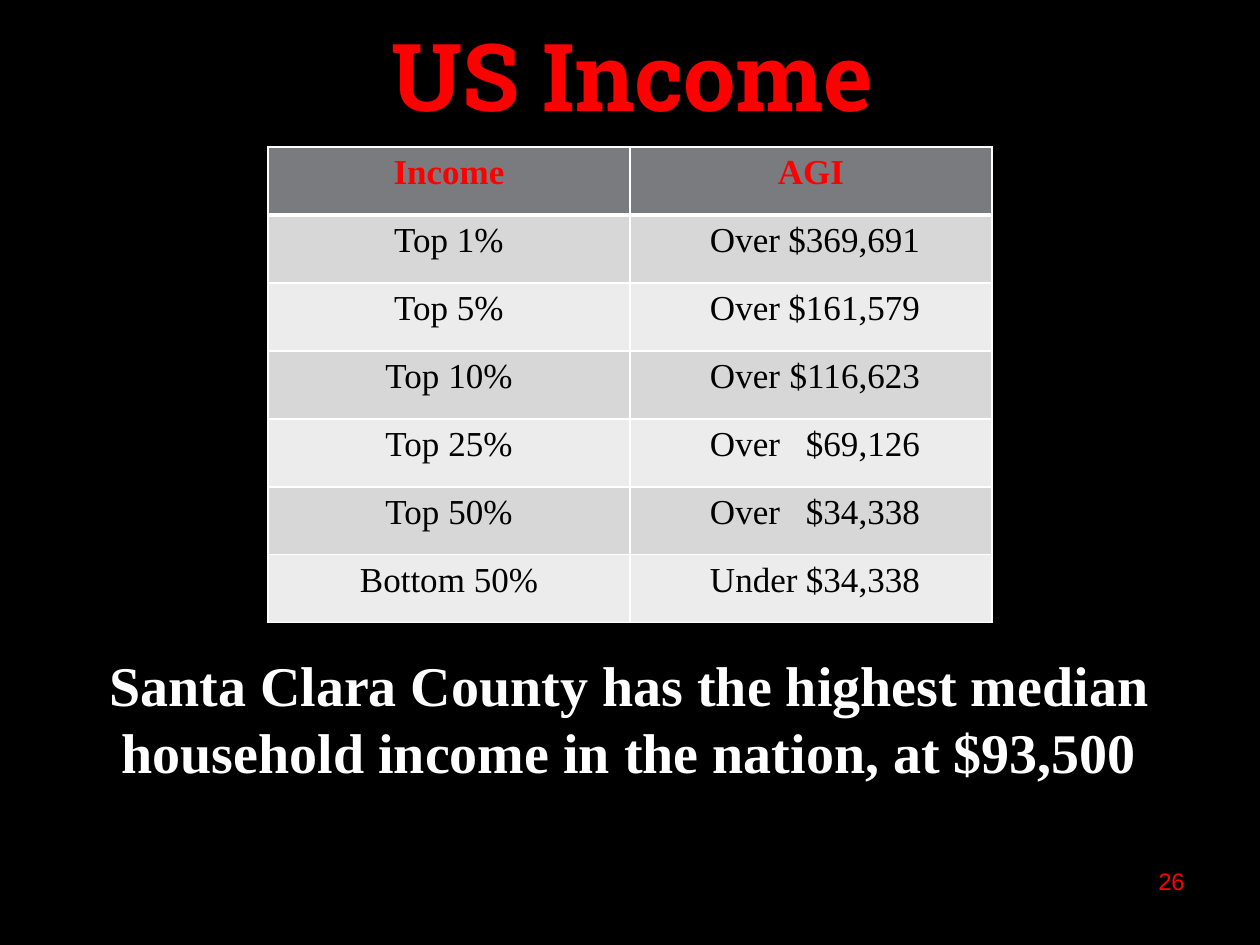
from dataclasses import dataclass

from lxml import etree
from pptx import Presentation
from pptx.dml.color import RGBColor
from pptx.enum.text import MSO_ANCHOR, PP_ALIGN
from pptx.oxml.ns import qn
from pptx.util import Pt

LEFT, CENTER, RIGHT = PP_ALIGN.LEFT, PP_ALIGN.CENTER, PP_ALIGN.RIGHT
TOP, MIDDLE = MSO_ANCHOR.TOP, MSO_ANCHOR.MIDDLE


@dataclass(frozen=True)
class Theme:
    black: str = "000000"
    white: str = "FFFFFF"
    red: str = "FF0000"
    header: str = "797B7E"
    bands: tuple = ("D7D7D8", "ECECEC")
    serif: str = "Times New Roman"
    slab: str = "Roboto Slab"
    sans: str = "Arial"
    title_size: float = 53.6
    note_size: float = 32
    table_size: float = 20
    number_size: float = 13.6
    thin: float = 1
    thick: float = 3


T = Theme()

HEADER = ("Income", "AGI")
INCOMES = [
    ("Top 1%", "Over", "$369,691"),
    ("Top 5%", "Over", "$161,579"),
    ("Top 10%", "Over", "$116,623"),
    ("Top 25%", "Over", "$69,126"),
    ("Top 50%", "Over", "$34,338"),
    ("Bottom 50%", "Under", "$34,338"),
]
# text, box (px), alignment, anchor, font
TEXTS = [
    ("26", (903, 861, 294, 66), RIGHT, TOP,
     dict(name=T.sans, size=T.number_size, color=T.red, bold=False)),
    ("US Income", (94, 21, 1077, 106), CENTER, MIDDLE,
     dict(name=T.slab, size=T.title_size, color=T.red, bold=True)),
    ("Santa Clara County has the highest median household income in the "
     "nation, at $93,500", (89, 644, 1081, 149), CENTER, TOP,
     dict(name=T.serif, size=T.note_size, color=T.white, bold=True)),
]
HEADER_FONT = dict(name=T.serif, size=T.table_size, color=T.red, bold=True)
BODY_FONT = dict(HEADER_FONT, color=T.black, bold=False)

SLIDE_W, SLIDE_H = 1260, 945
TABLE_LEFT, TABLE_TOP, COL_W, ROW_H = 268, 147, 362, 68
AMOUNT_INDENT, AMOUNT_W = 80, 210


def px(n):
    return round(n * 914400 / 126)


def write(tf, text, align, font):
    p = tf.paragraphs[0]
    p.alignment = align
    r = p.add_run()
    r.text = text
    values = dict(font, size=Pt(font["size"]))
    r.font.color.rgb = RGBColor.from_string(values.pop("color"))
    for key, value in values.items():
        setattr(r.font, key, value)
    return p


def add_text(slide, text, box, align, anchor, font):
    tf = slide.shapes.add_textbox(*map(px, box)).text_frame
    tf.word_wrap = True
    tf.vertical_anchor = anchor
    write(tf, text, align, font)


def set_borders(cell, top, bottom):
    tc_pr = cell._tc.get_or_add_tcPr()
    widths = dict(lnL=T.thin, lnR=T.thin, lnT=top, lnB=bottom)
    for side, width in widths.items():
        ln = etree.SubElement(tc_pr, qn(f"a:{side}"), w=str(Pt(width)))
        fill = etree.SubElement(ln, qn("a:solidFill"))
        etree.SubElement(fill, qn("a:srgbClr"), val=T.white)


def add_right_tab(p, position):
    tabs = etree.SubElement(p._p.get_or_add_pPr(), qn("a:tabLst"))
    etree.SubElement(tabs, qn("a:tab"), pos=str(px(position)), algn="r")


def style_cell(cell, row):
    set_borders(cell, T.thick if row == 1 else T.thin,
                T.thick if row == 0 else T.thin)
    color = T.bands[(row - 1) % 2] if row else T.header
    cell.fill.solid()
    cell.fill.fore_color.rgb = RGBColor.from_string(color)


def add_income_table(slide):
    rows, cols = len(INCOMES) + 1, len(HEADER)
    box = (TABLE_LEFT, TABLE_TOP, cols * COL_W, rows * ROW_H)
    table = slide.shapes.add_table(rows, cols, *map(px, box)).table
    for row in range(rows):
        for col in range(cols):
            style_cell(table.cell(row, col), row)
    for col, label in enumerate(HEADER):
        write(table.cell(0, col).text_frame, label, CENTER, HEADER_FONT)
    for row, (group, bound, amount) in enumerate(INCOMES, 1):
        write(table.cell(row, 0).text_frame, group, CENTER, BODY_FONT)
        cell = table.cell(row, 1)
        cell.margin_left = px(AMOUNT_INDENT)
        p = write(cell.text_frame, f"{bound}\t{amount}", LEFT, BODY_FONT)
        add_right_tab(p, AMOUNT_W)


def main():
    prs = Presentation()
    prs.slide_width, prs.slide_height = px(SLIDE_W), px(SLIDE_H)
    slide = prs.slides.add_slide(prs.slide_layouts[6])
    slide.background.fill.solid()
    slide.background.fill.fore_color.rgb = RGBColor.from_string(T.black)
    for item in TEXTS:
        add_text(slide, *item)
    add_income_table(slide)
    prs.save("out.pptx")


if __name__ == "__main__":
    main()
